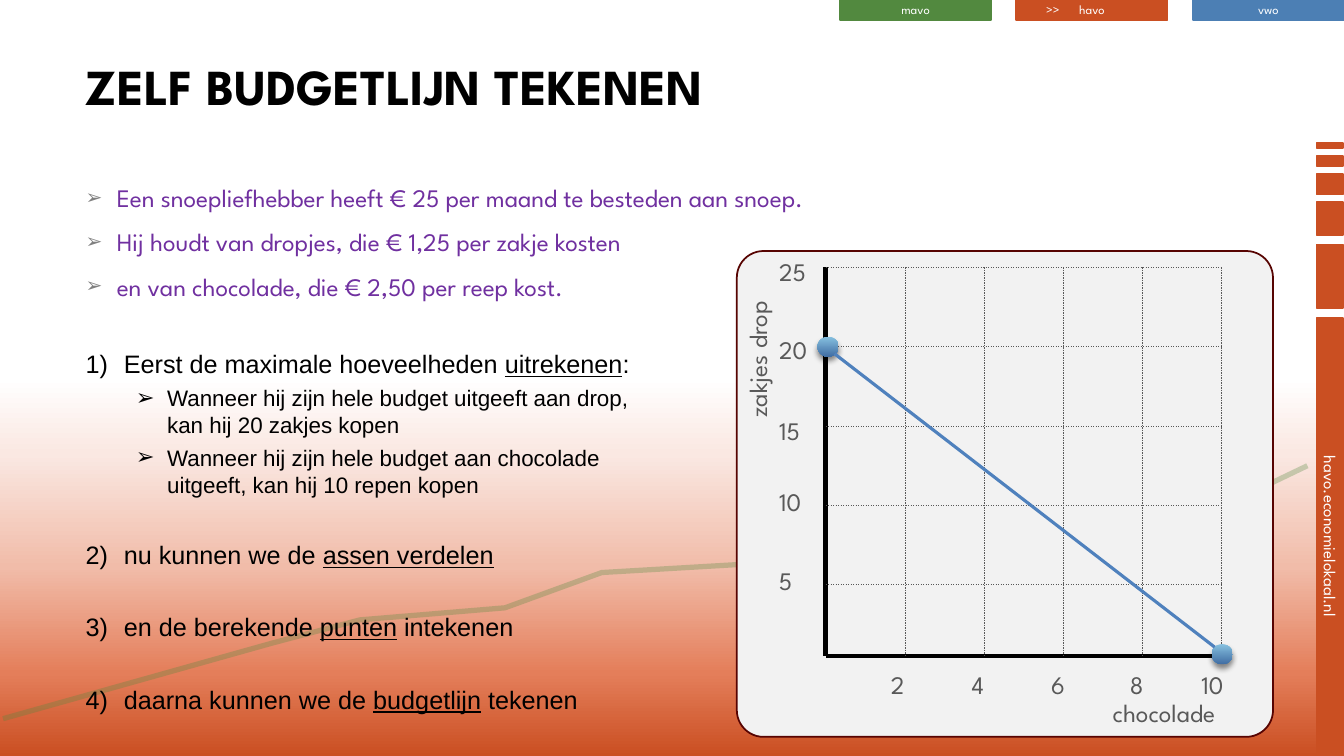
from lxml.etree import SubElement
from pptx import Presentation
from pptx.dml.color import RGBColor
from pptx.enum.dml import MSO_LINE
from pptx.enum.shapes import MSO_CONNECTOR, MSO_SHAPE
from pptx.enum.text import MSO_ANCHOR, MSO_AUTO_SIZE, PP_ALIGN
from pptx.oxml.ns import qn
from pptx.util import Inches, Pt

COLS, ROWS = 160, 90
W, H = Inches(13.333), Inches(7.5)
COLORS = {
    "mavo": "52893F", "havo": "CA4F22", "vwo": "4C7FB4", "white": "FFFFFF",
    "black": "000000", "gray": "595959", "bullet": "808080", "purple": "7030A0",
    "panel": "F2F2F2", "edge": "570402", "budget": "4F81BD",
    "glow4": "E47E5A", "glow3": "F1BCA9", "glow2": "FAE8E2",
    "dot_top": "86C0DF", "dot_base": "416EA4",
}
SPARTAN, ARIAL = "League Spartan", "Arial"
LABEL = {"name": SPARTAN, "size": Pt(18)}
TINY = {"name": SPARTAN, "size": Pt(9)}

# Plot area, in columns and rows
LEFT, TOP, RIGHT, BOTTOM = 98.28, 31.8, 145.4, 78.12
STEP_X, STEP_Y = 9.43, 9.45

TREND = [(0.36, 85.56), (32.4, 76.56), (42.84, 73.8), (60.12, 72.36),
         (71.64, 68.16), (94.2, 66.84), (101.88, 67.92), (111.36, 65.88),
         (123.48, 64.44), (133.44, 66.12), (155.64, 55.44)]
SIDE_BARS = [(37.87, 51.96, "havo.economielokaal.nl"), (29.1, 7.56, ""),
             (24.06, 3.96, ""), (20.76, 2.4, ""), (18.6, 1.2, ""), (16.98, 0.6, "")]
Y_LABELS = [("5", 66.72), ("10", 57.36), ("15", 48.84), ("20", 39.24), ("25", 29.88)]
X_LABELS = [("2", 104.88), ("4", 114.48), ("6", 123.96), ("8", 133.32), ("10", 141.84)]
STORY = ["Een snoepliefhebber heeft € 25 per maand te besteden aan snoep.",
         "Hij houdt van dropjes, die € 1,25 per zakje kosten",
         "en van chocolade, die € 2,50 per reep kost."]
# Level, space before, then text pieces of which every second one is underlined
STEPS = [
    (0, 0, ["Eerst de maximale hoeveelheden ", "uitrekenen", ":"]),
    (1, 4, ["Wanneer hij zijn hele budget uitgeeft aan drop, kan hij 20 zakjes kopen"]),
    (1, 4, ["Wanneer hij zijn hele budget aan chocolade uitgeeft, kan hij 10 repen kopen"]),
    (0, 30, ["nu kunnen we de ", "assen verdelen"]),
    (0, 30, ["en de berekende ", "punten", " intekenen"]),
    (0, 30, ["daarna kunnen we de ", "budgetlijn", " tekenen"]),
]


def col(n):
    return int(W * n / COLS)


def row(n):
    return int(H * n / ROWS)


def box(x, y, w, h):
    return col(x), row(y), col(w), row(h)


def rgb(name):
    return RGBColor.from_string(COLORS[name])


def add_run(p, text, color, fmt):
    r = p.add_run()
    r.text = text
    for key, value in fmt.items():
        setattr(r.font, key, value)
    r.font.color.rgb = rgb(color)


def set_gradient(fill, element, stops, angle):
    """Give fill, which lies inside element, the stops (percent, colour)."""
    fill.gradient()
    grad = next(element.iter(qn("a:gradFill")))
    gs_list = grad.find(qn("a:gsLst"))
    gs_list.clear()
    for pos, color in stops:
        gs = SubElement(gs_list, qn("a:gs"), pos=str(pos * 1000))
        SubElement(gs, qn("a:srgbClr"), val=COLORS[color])
    grad.find(qn("a:lin")).set("ang", str(angle * 60000))


def set_bullet(p, margin, hang, char=None, color=None, size=100):
    """Hang the paragraph on char, or on a number when there is no char."""
    pPr = p._p.get_or_add_pPr()
    pPr.set("marL", str(Inches(margin)))
    pPr.set("indent", str(-Inches(hang)))
    if color:
        SubElement(SubElement(pPr, qn("a:buClr")), qn("a:srgbClr"), val=COLORS[color])
    SubElement(pPr, qn("a:buSzPct"), val=str(size * 1000))
    SubElement(pPr, qn("a:buFont"), typeface=ARIAL)
    if char:
        SubElement(pPr, qn("a:buChar"), char=char)
    else:
        SubElement(pPr, qn("a:buAutoNum"), type="arabicParenR")


def add_bar(s, place, color, text="", fmt=TINY, rotation=0):
    sp = s.shapes.add_shape(MSO_SHAPE.RECTANGLE, *place)
    sp.shadow.inherit = False
    sp.rotation = rotation
    sp.fill.solid()
    sp.fill.fore_color.rgb = sp.line.color.rgb = rgb(color)
    sp.line.width = Pt(1.25)
    if text:
        tf = sp.text_frame
        tf.margin_top, tf.margin_bottom = 0, Inches(0.02)
        tf.vertical_anchor = MSO_ANCHOR.MIDDLE
        tf.paragraphs[0].alignment = PP_ALIGN.CENTER
        add_run(tf.paragraphs[0], text, "white", fmt)


def add_label(s, text, x, y, w, h=4.8, color="gray", fmt=LABEL, rotation=0):
    tb = s.shapes.add_textbox(*box(x, y, w, h))
    tb.rotation = rotation
    tf = tb.text_frame
    tf.word_wrap = False
    tf.auto_size = MSO_AUTO_SIZE.SHAPE_TO_FIT_TEXT
    add_run(tf.paragraphs[0], text, color, fmt)


def add_text_area(s, *place):
    tf = s.shapes.add_textbox(*box(*place)).text_frame
    tf.word_wrap = True
    return tf


def next_paragraph(tf, i):
    return tf.add_paragraph() if i else tf.paragraphs[0]


def add_line(s, x1, y1, x2, y2, color, width, dash=None):
    ln = s.shapes.add_connector(MSO_CONNECTOR.STRAIGHT, col(x1), row(y1), col(x2), row(y2))
    ln.line.color.rgb = rgb(color)
    ln.line.width = Pt(width)
    ln.line.dash_style = dash
    SubElement(ln._element.spPr, qn("a:effectLst"))


def add_marker(s, x, y):
    sp = s.shapes.add_shape(MSO_SHAPE.OVAL, *box(x, y, 2.52, 2.4))
    set_gradient(sp.fill, sp.element, [(0, "dot_top"), (100, "dot_base")], 90)
    sp.line.fill.background()
    sp.shadow.inherit = False
    shadow = SubElement(sp.element.spPr.find(qn("a:effectLst")), qn("a:outerShdw"),
                        blurRad=str(Pt(4)), dist=str(Pt(3)), dir="5400000", rotWithShape="0")
    black = SubElement(shadow, qn("a:srgbClr"), val=COLORS["black"])
    SubElement(black, qn("a:alpha"), val="46000")


def add_trend(s):
    points = [(col(x), row(y)) for x, y in TREND]
    builder = s.shapes.build_freeform(*points[0])
    builder.add_line_segments(points[1:], close=False)
    sp = builder.convert_to_shape()
    sp.shadow.inherit = False
    sp.fill.background()
    sp.line.color.rgb = rgb("mavo")
    sp.line.width = Pt(3.75)
    SubElement(next(sp.element.spPr.iter(qn("a:srgbClr"))), qn("a:alpha"), val="30000")


def add_frame(s):
    for i, level in enumerate(["mavo", "havo", "vwo"]):
        add_bar(s, box(100 + 21 * i, 0, 18, 2.4), level, level)
    for top, length, text in SIDE_BARS:
        place = box(158.28 - length / 2, top + length / 2 - 1.56, length, 3.12)
        add_bar(s, place, "havo", text, {"name": SPARTAN, "size": Pt(12)}, 90)
    add_trend(s)
    add_label(s, ">>", 123.36, -0.36, 4.32, 3, "white", TINY)


def add_panel(s):
    sp = s.shapes.add_shape(MSO_SHAPE.ROUNDED_RECTANGLE, *box(87.72, 29.88, 63.84, 57.84))
    sp.adjustments[0] = 0.055
    sp.shadow.inherit = False
    sp.fill.solid()
    sp.fill.fore_color.rgb = rgb("panel")
    sp.line.color.rgb = rgb("edge")
    sp.line.width = Pt(1.25)


def add_plot(s):
    add_line(s, LEFT, TOP, LEFT, BOTTOM, "black", 3)
    add_line(s, RIGHT, BOTTOM, LEFT, BOTTOM, "black", 3)
    for i in range(5):
        x, y = LEFT + STEP_X * (i + 1), TOP + STEP_Y * i
        add_line(s, LEFT, y, RIGHT, y, "gray", 0.25, MSO_LINE.DASH)
        add_line(s, x, TOP, x, BOTTOM, "gray", 0.25, MSO_LINE.DASH)
    add_label(s, "chocolade", 131.28, 82.44, 18.84)
    add_label(s, "zakjes drop", 80.64, 39, 18.96, rotation=270)
    for text, y in Y_LABELS:
        add_label(s, text, 91.56, y, 2.4 + 1.68 * len(text))
    for text, x in X_LABELS:
        add_label(s, text, x, 79.08, 2.4 + 1.68 * len(text))
    add_marker(s, 97.32, 40.08)
    add_marker(s, 144.24, 76.68)
    add_line(s, 99.36, 42.12, 144.6, 77.04, "budget", 2.25)


def add_story(s):
    tf = add_text_area(s, 9, 21.12, 137.28, 17.88)
    for i, text in enumerate(STORY):
        p = next_paragraph(tf, i)
        p.space_before, p.space_after = Pt(4 if i else 0), Pt(6)
        set_bullet(p, 0.31, 0.31, "➢", "bullet", 80)
        add_run(p, text, "purple", LABEL)


def add_steps(s):
    tf = add_text_area(s, 9, 40.92, 69.24, 46.92)
    for i, (level, before, pieces) in enumerate(STEPS):
        p = next_paragraph(tf, i)
        p.level, p.space_before = level, Pt(before)
        set_bullet(p, *((0.81, 0.31, "➢") if level else (0.38, 0.38)))
        for j, text in enumerate(pieces):
            add_run(p, text, "black", {"name": ARIAL, "size": Pt(16 if level else 18),
                                       "underline": j % 2 == 1})


def main():
    prs = Presentation()
    prs.slide_width, prs.slide_height = W, H
    s = prs.slides.add_slide(prs.slide_layouts[6])
    set_gradient(s.background.fill, s.element, [
        (0, "havo"), (11, "glow4"), (25, "glow3"), (40, "glow2"), (50, "white")], 270)
    add_frame(s)
    add_panel(s)
    title = add_text_area(s, 9, 6, 120.36, 10.68)
    add_run(title.paragraphs[0], "ZELF BUDGETLIJN TEKENEN", "black",
            {"name": SPARTAN, "size": Pt(36), "bold": True})
    add_story(s)
    add_plot(s)
    add_steps(s)
    prs.save("out.pptx")


if __name__ == "__main__":
    main()
